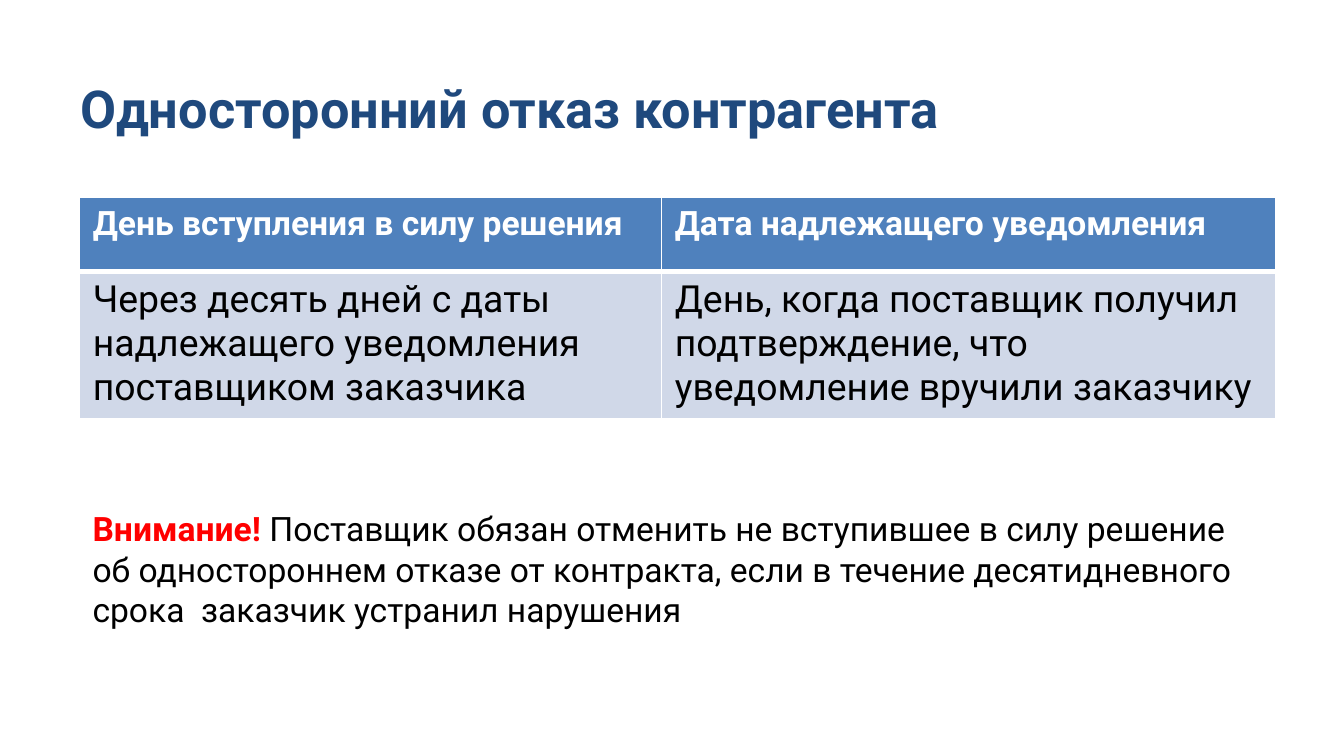
import lxml.etree
import pptx
import pptx.dml.color
import pptx.enum.text
import pptx.oxml.ns
import pptx.util

Cm = pptx.util.Cm
Pt = pptx.util.Pt
RGBColor = pptx.dml.color.RGBColor
qn = pptx.oxml.ns.qn

NAVY = RGBColor(0x1F, 0x49, 0x7D)
BLUE = RGBColor(0x4F, 0x81, 0xBD)
PALE_BLUE = RGBColor(0xD0, 0xD8, 0xE8)
RED = RGBColor(0xFF, 0x00, 0x00)
BLACK = RGBColor(0x00, 0x00, 0x00)
WHITE = RGBColor(0xFF, 0xFF, 0xFF)

TITLE_FONT = {"size": Pt(28), "bold": True, "color": NAVY}
HEADER_FONT = {"size": Pt(18), "bold": True, "color": WHITE}
BODY_FONT = {"size": Pt(20), "bold": False, "color": BLACK}
WARNING_FONT = {"size": Pt(18), "bold": True, "color": RED}
NOTE_FONT = {"size": Pt(18), "bold": False, "color": BLACK}


def add_run(paragraph, text, font_format):
    run = paragraph.add_run()
    run.text = text
    run.font.name = "Roboto"
    for attribute, value in font_format.items():
        if attribute == "color":
            run.font.color.rgb = value
        else:
            setattr(run.font, attribute, value)


def set_borders(cell, widths):
    """Give the cell white borders; widths maps line tags to points."""
    properties = cell._tc.get_or_add_tcPr()
    for position, (tag, width) in enumerate(widths.items()):
        line = lxml.etree.Element(qn(tag), w=str(Pt(width)))
        fill = lxml.etree.SubElement(line, qn("a:solidFill"))
        lxml.etree.SubElement(fill, qn("a:srgbClr"), val=str(WHITE))
        properties.insert(position, line)


presentation = pptx.Presentation()
presentation.slide_width = Cm(25.4)
presentation.slide_height = Cm(14.29)
slide = presentation.slides.add_slide(presentation.slide_layouts[6])

# Title
title = slide.shapes.add_textbox(Cm(1.27), Cm(1.14), Cm(22.86), Cm(1.8)).text_frame
title.word_wrap = True
title.vertical_anchor = pptx.enum.text.MSO_ANCHOR.MIDDLE
add_run(title.paragraphs[0], "Односторонний отказ контрагента", TITLE_FONT)

# Terms table
column_widths = [11, 11.61]
row_heights = [1.4, 2.49]
content_left, content_width = Cm(1.5), Cm(sum(column_widths))
rows = [
    (
        ["День вступления в силу решения", "Дата надлежащего уведомления"],
        HEADER_FONT, BLUE, 3, 1,
    ),
    (
        [
            "Через десять дней c даты надлежащего уведомления поставщиком заказчика",
            "День, когда поставщик получил подтверждение, что уведомление вручили заказчику",
        ],
        BODY_FONT, PALE_BLUE, 1, 3,
    ),
]
terms = slide.shapes.add_table(
    len(rows), len(column_widths), content_left, Cm(3.73),
    content_width, Cm(sum(row_heights)),
).table
for column, width in zip(terms.columns, column_widths):
    column.width = Cm(width)
for row, height, (texts, font_format, fill_color, bottom, top) in zip(
    terms.rows, row_heights, rows
):
    row.height = Cm(height)
    for cell, text in zip(row.cells, texts):
        cell.fill.solid()
        cell.fill.fore_color.rgb = fill_color
        set_borders(cell, {"a:lnL": 1, "a:lnR": 1, "a:lnT": top, "a:lnB": bottom})
        add_run(cell.text_frame.paragraphs[0], text, font_format)

# Warning note
note = slide.shapes.add_textbox(
    content_left, Cm(8.74), content_width, Cm(3.33)
).text_frame
note.word_wrap = True
note.margin_top = Cm(0.87)
add_run(note.paragraphs[0], "Внимание! ", WARNING_FONT)
add_run(
    note.paragraphs[0],
    "Поставщик обязан отменить не вступившее в силу решение об одностороннем "
    "отказе от контракта, если в течение десятидневного срока  заказчик "
    "устранил нарушения",
    NOTE_FONT,
)

presentation.save("out.pptx")
